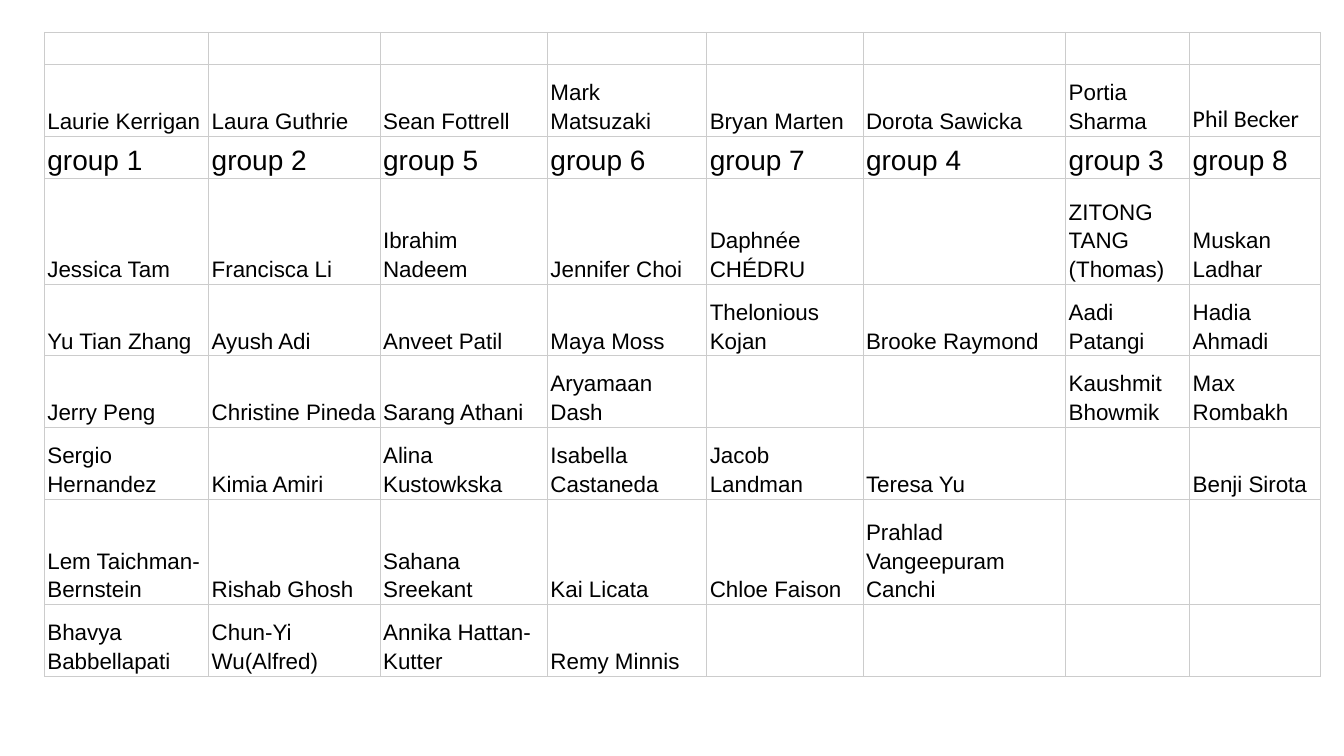
"""Build a slide with a table of eight groups, their leaders and members."""
import lxml.etree
import pptx
import pptx.dml.color
import pptx.enum.text
import pptx.oxml.ns
import pptx.util

Inches, Pt = pptx.util.Inches, pptx.util.Pt
RGB = pptx.dml.color.RGBColor.from_string
qn = pptx.oxml.ns.qn

COLORS = {"text": "000000", "border": "CCCCCC", "cell": "FFFFFF"}
COLS = [1.63, 1.7, 1.66, 1.58, 1.55, 2.01, 1.23, 1.3]
BLANK, SINGLE, DOUBLE, TRIPLE = 0.32, 0.71, 0.71, 1.05
GROUP = 0.42
ROWS = [
    (BLANK, [""] * 8),
    (DOUBLE, ["Laurie Kerrigan", "Laura Guthrie", "Sean Fottrell", "Mark Matsuzaki",
              "Bryan Marten", "Dorota Sawicka", "Portia Sharma", "Phil Becker"]),
    (GROUP, [f"group {n}" for n in (1, 2, 5, 6, 7, 4, 3, 8)]),
    (TRIPLE, ["Jessica Tam", "Francisca Li", "Ibrahim Nadeem", "Jennifer Choi",
              "Daphnée CHÉDRU", "", "ZITONG TANG (Thomas)", "Muskan Ladhar"]),
    (DOUBLE, ["Yu Tian Zhang", "Ayush Adi", "Anveet Patil", "Maya Moss",
              "Thelonious Kojan", "Brooke Raymond", "Aadi Patangi", "Hadia Ahmadi"]),
    (DOUBLE, ["Jerry Peng", "Christine Pineda", "Sarang Athani", "Aryamaan Dash",
              "", "", "Kaushmit Bhowmik", "Max Rombakh"]),
    (DOUBLE, ["Sergio Hernandez", "Kimia Amiri", "Alina Kustowkska", "Isabella Castaneda",
              "Jacob Landman", "Teresa Yu", "", "Benji Sirota"]),
    (TRIPLE, ["Lem Taichman-Bernstein", "Rishab Ghosh", "Sahana Sreekant", "Kai Licata",
              "Chloe Faison", "Prahlad Vangeepuram Canchi", "", ""]),
    (DOUBLE, ["Bhavya Babbellapati", "Chun-Yi Wu(Alfred)", "Annika Hattan-Kutter",
              "Remy Minnis", "", "", "", ""]),
]


def add_borders(cell):
    tcPr = cell._tc.get_or_add_tcPr()
    for side in ("a:lnL", "a:lnR", "a:lnT", "a:lnB"):
        ln = lxml.etree.SubElement(tcPr, qn(side), w=str(Pt(0.47)))
        fill = lxml.etree.SubElement(ln, qn("a:solidFill"))
        lxml.etree.SubElement(fill, qn("a:srgbClr"), val=COLORS["border"])


prs = pptx.Presentation()
prs.slide_width, prs.slide_height = Inches(13.33), Inches(7.5)
s = prs.slides.add_slide(prs.slide_layouts[6])

height = sum(h for h, names in ROWS)
table = s.shapes.add_table(len(ROWS), len(COLS), Inches(0.44), Inches(0.32),
                           Inches(sum(COLS)), Inches(height)).table
table.first_row = table.horz_banding = False
for col, width in zip(table.columns, COLS):
    col.width = Inches(width)

for i, (row_height, names) in enumerate(ROWS):
    table.rows[i].height = Inches(row_height)
    for j, name in enumerate(names):
        cell = table.cell(i, j)
        cell.margin_left = cell.margin_right = Inches(0.03)
        cell.margin_top = cell.margin_bottom = Inches(0.02)
        cell.vertical_anchor = pptx.enum.text.MSO_ANCHOR.BOTTOM
        add_borders(cell)
        cell.fill.solid()
        cell.fill.fore_color.rgb = RGB(COLORS["cell"])
        p = cell.text_frame.paragraphs[0]
        if not name:
            lxml.etree.SubElement(p._p, qn("a:endParaRPr"), sz="1600")
            continue
        font, size = ("Calibri", 17) if name == "Phil Becker" else ("Arial", 16)
        if row_height == GROUP:
            size = 20
        else:
            p.line_spacing = 1.15
        r = p.add_run()
        r.text = name
        r.font.name, r.font.size = font, Pt(size)
        r.font.color.rgb = RGB(COLORS["text"])

prs.save("out.pptx")
